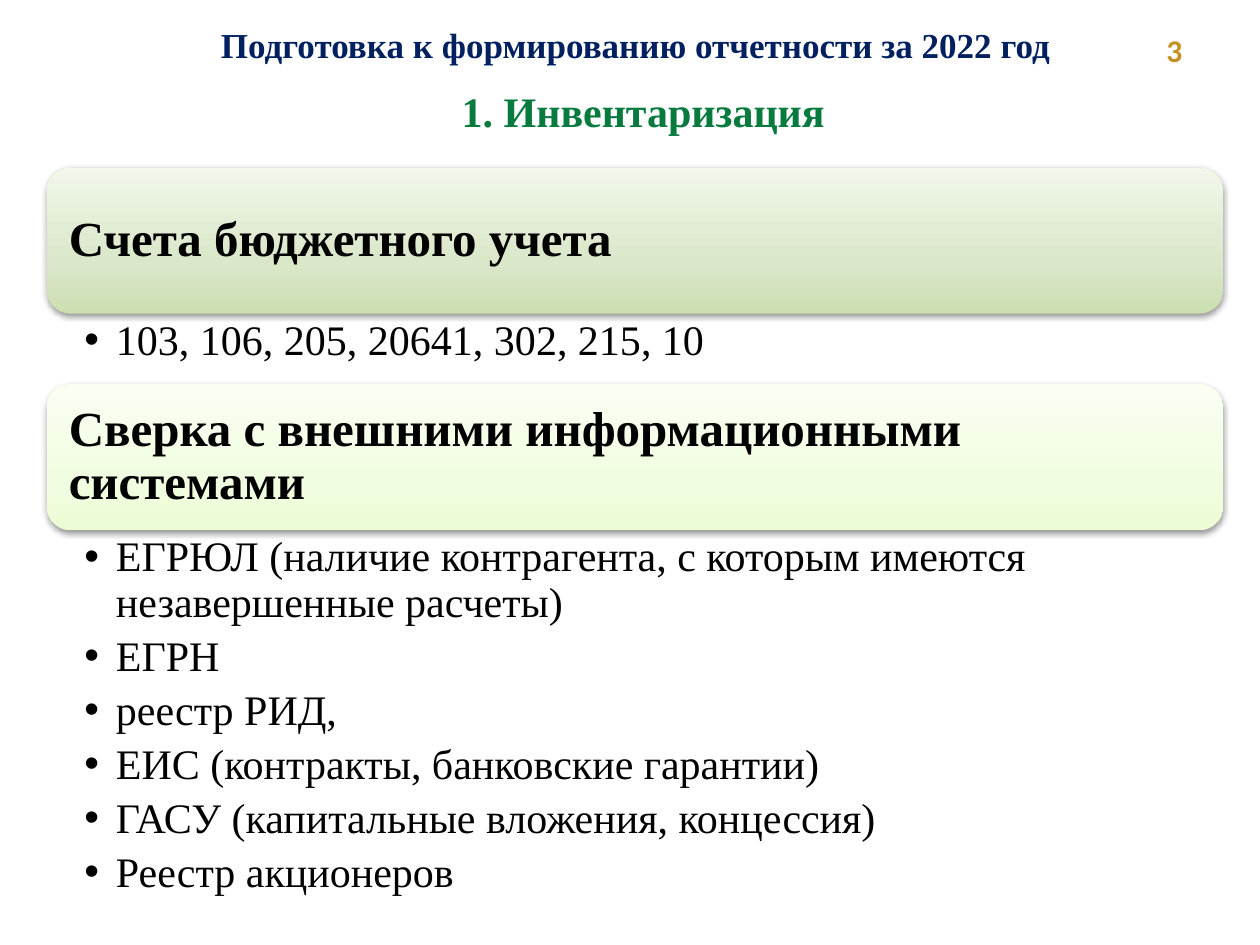
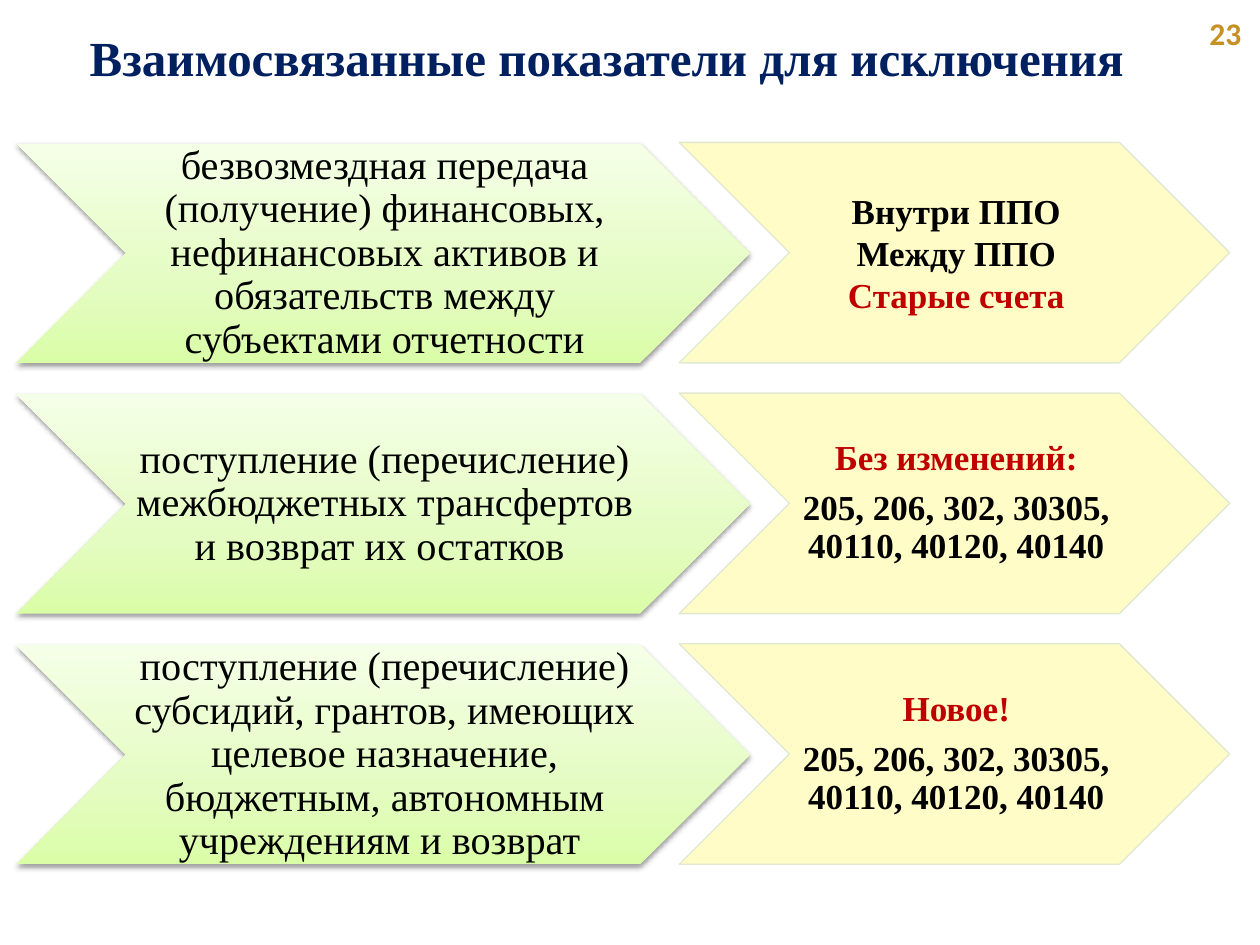
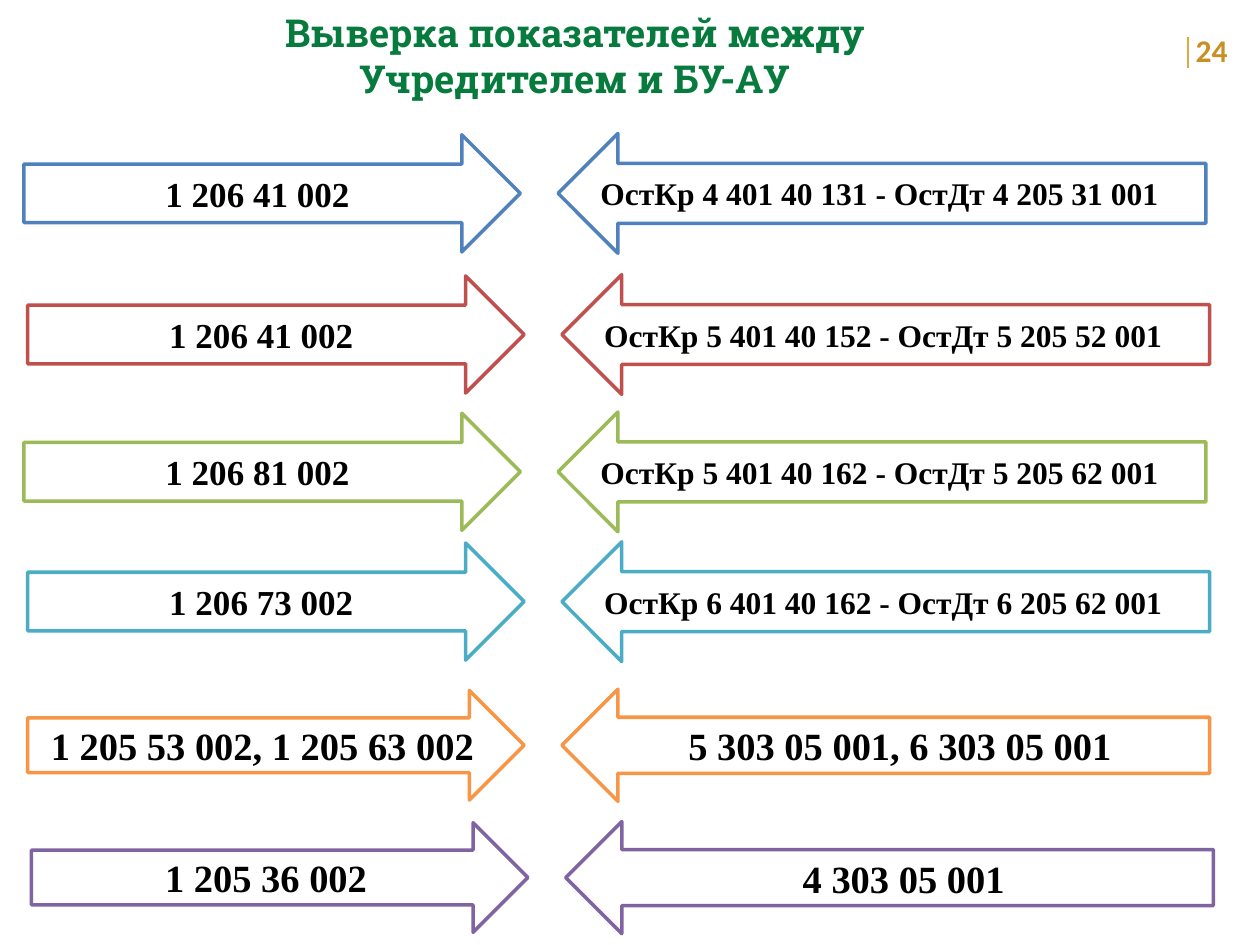
"""Build three slides on preparing the 2022 budget reports."""
from dataclasses import dataclass, replace
from typing import NamedTuple

from lxml.etree import SubElement
from pptx import Presentation
from pptx.dml.color import RGBColor
from pptx.enum.shapes import MSO_CONNECTOR as Link, MSO_SHAPE as Form
from pptx.enum.text import MSO_ANCHOR as Anchor, MSO_AUTO_SIZE as Fit, PP_ALIGN as Align
from pptx.oxml.ns import qn
from pptx.shapes.autoshape import Shape
from pptx.slide import Slide
from pptx.text.text import TextFrame
from pptx.util import Inches, Pt

HUES = {
    "navy": "002060", "green": "077A3E", "gold": "C79023", "rule": "DEAA46",
    "black": "000000", "white": "FFFFFF", "red": "C00000",
    "cream": "FFFCC1", "edge": "DEE7D1",
    "blue": "4F81BD", "brick": "C0504D", "olive": "9BBB59",
    "aqua": "4BACC6", "orange": "F79646", "violet": "8064A2",
}
FADES = {
    "sage": ("CCDFB1", "DAE7C9", "F1F7EA"),
    "mint": ("ECFCD5", "F1FDE1", "FAFFF2"),
    "lime": ("DAFDA7", "E4FCC2", "F5FFE7"),
}
STOPS = (0, 35, 100)


class Box(NamedTuple):
    left: float
    top: float
    width: float
    height: float


class Line(NamedTuple):
    text: str
    hue: str = "black"


@dataclass(frozen=True)
class Style:
    size: float
    hue: str = "black"
    font: str = "Times New Roman"
    bold: bool = True
    align: Align = Align.CENTER
    pitch: float = 1.0
    after: float = 0


@dataclass(frozen=True)
class Panel:
    head: str
    fade: str
    top: float
    depth: float
    items: tuple[str, ...]


@dataclass(frozen=True)
class Step:
    text: str
    notes: tuple[Line, ...]
    style: Style


@dataclass(frozen=True)
class Pair:
    left: float
    top: float
    height: float
    hue: str
    debit: str
    credit: str
    sizes: tuple[int, int] = (22, 22)
    align: Align = Align.CENTER


TITLE = Style(28, "navy")
PAGE = Style(18, "gold", "Calibri", align=Align.LEFT)
HEAD = Style(28, align=Align.LEFT, pitch=0.9)
ITEM = Style(24, bold=False, align=Align.LEFT, pitch=0.9, after=5)
STEP = Style(23, bold=False, pitch=0.9)
NOTE = Style(20)
SPACED = replace(NOTE, pitch=0.9, after=7)

PANELS = (
    Panel("Счета бюджетного учета", "sage", 1.33, 0.56,
          ("103, 106, 205, 20641, 302, 215, 10",)),
    Panel("Сверка с внешними информационными системами", "mint", 3.05, 3.09,
          ("ЕГРЮЛ (наличие контрагента, с которым имеются незавершенные расчеты)",
           "ЕГРН", "реестр РИД,", "ЕИС (контракты, банковские гарантии)",
           "ГАСУ (капитальные вложения, концессия)", "Реестр акционеров")),
)
CODES = Line("205, 206, 302, 30305, 40110, 40120, 40140")
STEPS = (
    Step("безвозмездная передача (получение) финансовых, нефинансовых активов "
         "и обязательств между субъектами отчетности",
         (Line("Внутри ППО"), Line("Между ППО"), Line("Старые счета", "red")), NOTE),
    Step("поступление (перечисление) межбюджетных трансфертов и возврат их остатков ",
         (Line("Без изменений:", "red"), CODES), SPACED),
    Step("поступление (перечисление) субсидий, грантов, имеющих целевое назначение, "
         "бюджетным, автономным учреждениям и возврат ",
         (Line("Новое!", "red"), CODES), SPACED),
)
SMALL = ((20, 18), Align.LEFT)
PAIRS = (
    Pair(0.19, 1.07, 0.93, "blue", "1 206 41 002",
         "ОстКр 4 401 40 131 - ОстДт 4 205 31 001", *SMALL),
    Pair(0.22, 2.19, 0.93, "brick", "1 206 41 002",
         "ОстКр 5 401 40 152 - ОстДт 5 205 52 001", *SMALL),
    Pair(0.19, 3.28, 0.93, "olive", "1 206 81 002",
         "ОстКр 5 401 40 162 - ОстДт 5 205 62 001", *SMALL),
    Pair(0.22, 4.31, 0.93, "aqua", "1 206 73 002",
         "ОстКр 6 401 40 162 - ОстДт 6 205 62 001", *SMALL),
    Pair(0.22, 5.48, 0.87, "orange", "1 205 53 002, 1 205 63 002",
         "5 303 05 001, 6 303 05 001"),
    Pair(0.25, 6.53, 0.87, "violet", "1 205 36 002", "4 303 05 001"),
)


def tint(name: str) -> RGBColor:
    return RGBColor.from_string(HUES[name])


def write(frame: TextFrame, lines: tuple[Line, ...], style: Style,
          anchor: Anchor = Anchor.TOP, pad: tuple[float, ...] = (0.1, 0.05, 0.1, 0.05)) -> None:
    frame.word_wrap = True
    frame.auto_size = Fit.NONE
    frame.vertical_anchor = anchor
    (frame.margin_left, frame.margin_top,
     frame.margin_right, frame.margin_bottom) = map(Inches, pad)
    for num, line in enumerate(lines):
        para = frame.add_paragraph() if num else frame.paragraphs[0]
        para.text = line.text
        para.alignment = style.align
        para.line_spacing = style.pitch
        para.space_before = Pt(0)
        para.space_after = Pt(style.after)
        font = para.font
        font.name, font.size, font.bold = style.font, Pt(style.size), style.bold
        font.color.rgb = tint(line.hue)


def place(shape: Shape, box: Box) -> None:
    shape.left, shape.top, shape.width, shape.height = map(Inches, box)


def label(slide: Slide, box: Box, text: str, style: Style) -> None:
    shape = slide.shapes.add_textbox(*map(Inches, box))
    write(shape.text_frame, (Line(text, style.hue),), style)


def start(deck: Presentation, layout: int, title: str, box: Box, style: Style,
          page: str, spot: Box) -> Slide:
    slide = deck.slides.add_slide(deck.slide_layouts[layout])
    place(slide.shapes.title, box)
    write(slide.shapes.title.text_frame, (Line(title, style.hue),), style)
    label(slide, spot, page, PAGE)
    return slide


def draw(slide: Slide, form: Form, box: Box) -> Shape:
    shape = slide.shapes.add_shape(form, *map(Inches, box))
    shape.shadow.inherit = False
    shape.line.fill.background()
    return shape


def paint(shape: Shape, fill: str, edge: str, width: float) -> None:
    shape.fill.solid()
    shape.fill.fore_color.rgb = tint(fill)
    shape.line.color.rgb = tint(edge)
    shape.line.width = Pt(width)


def shade(shape: Shape, fade: str) -> None:
    shape.fill.gradient()
    shape.fill.gradient_angle = 90
    props = shape._element.spPr
    stops = props.find(qn("a:gradFill")).find(qn("a:gsLst"))
    for old in list(stops):
        stops.remove(old)
    for pos, hue in zip(STOPS, FADES[fade]):
        stop = SubElement(stops, qn("a:gs"), pos=str(pos * 1000))
        SubElement(stop, qn("a:srgbClr"), val=hue)
    cast = SubElement(props.find(qn("a:effectLst")), qn("a:outerShdw"), blurRad="40000",
                      dist="20000", dir="5400000", rotWithShape="0")
    dark = SubElement(cast, qn("a:srgbClr"), val=HUES["black"])
    SubElement(dark, qn("a:alpha"), val="38000")


def thin(shape: Shape) -> None:
    for color in shape._element.spPr.iter(qn("a:srgbClr")):
        SubElement(color, qn("a:alpha"), val="90000")


def bullet(frame: TextFrame) -> None:
    for para in frame.paragraphs:
        props = para._p.get_or_add_pPr()
        props.set("marL", str(Inches(0.25)))
        props.set("indent", str(Inches(-0.25)))
        SubElement(props, qn("a:buChar"), char="•")


def stock(deck: Presentation) -> None:
    slide = start(deck, 3, "Подготовка к формированию отчетности за 2022 год",
                  Box(1.53, 0.14, 7.03, 0.44), replace(TITLE, size=20),
                  "3", Box(9.16, 0.2, 0.66, 0.4))
    label(slide, Box(0.74, 0.63, 8.73, 0.5), "1. Инвентаризация", Style(24, "green"))
    for slot, panel in enumerate(PANELS, 1):
        bar = draw(slide, Form.ROUNDED_RECTANGLE, Box(0.37, panel.top, 9.34, 1.16))
        shade(bar, panel.fade)
        write(bar.text_frame, (Line(panel.head),), HEAD, Anchor.MIDDLE, (0.12,) * 4)
        body = slide.placeholders[slot]
        place(body, Box(0.37, panel.top + 1.16, 9.34, panel.depth))
        write(body.text_frame, tuple(map(Line, panel.items)), ITEM,
              pad=(0.3, 0.04, 0.24, 0.04))
        bullet(body.text_frame)


def links(deck: Presentation) -> None:
    slide = start(deck, 5, "Взаимосвязанные показатели для исключения",
                  Box(0.13, 0.17, 9.37, 0.57), TITLE, "23", Box(9.5, 0.06, 0.5, 0.4))
    pad = (0.03, 0.02, 0, 0.02)
    for row, step in enumerate(STEPS):
        top = 1.14 + row * 1.99
        lead = draw(slide, Form.CHEVRON, Box(0.13, top, 5.82, 1.74))
        shade(lead, "lime")
        write(lead.text_frame, (Line(step.text),), STEP, Anchor.MIDDLE, pad)
        note = draw(slide, Form.CHEVRON, Box(5.39, top - 0.01, 4.37, 1.75))
        paint(note, "cream", "edge", 0.75)
        thin(note)
        write(note.text_frame, step.notes, step.style, Anchor.MIDDLE, pad)


def match(deck: Presentation) -> None:
    slide = start(deck, 5, "Выверка показателей между Учредителем и БУ-АУ",
                  Box(1.78, 0.02, 5.56, 0.84), Style(22, "green", "Roboto Slab"),
                  "24", Box(9.39, 0.2, 0.61, 0.4))
    rule = slide.shapes.add_connector(Link.STRAIGHT, *map(Inches, (9.43, 0.29, 9.43, 0.54)))
    rule.line.color.rgb = tint("rule")
    rule.line.width = Pt(1)
    SubElement(rule._element.spPr, qn("a:effectLst"))
    for pair in PAIRS:
        right = Box(pair.left, pair.top, 3.94, pair.height)
        left = Box(pair.left + 4.24, pair.top - 0.01, 5.14, pair.height + 0.02)
        sides = (
            (Form.RIGHT_ARROW, right, pair.debit, Align.CENTER),
            (Form.LEFT_ARROW, left, pair.credit, pair.align),
        )
        for (form, box, text, align), size in zip(sides, pair.sizes):
            arrow = draw(slide, form, box)
            paint(arrow, "white", pair.hue, 2)
            write(arrow.text_frame, (Line(text),), Style(size, align=align), Anchor.MIDDLE)


def main() -> None:
    deck = Presentation()
    deck.slide_width, deck.slide_height = Inches(10), Inches(7.5)
    stock(deck)
    links(deck)
    match(deck)
    deck.save("out.pptx")


if __name__ == "__main__":
    main()
